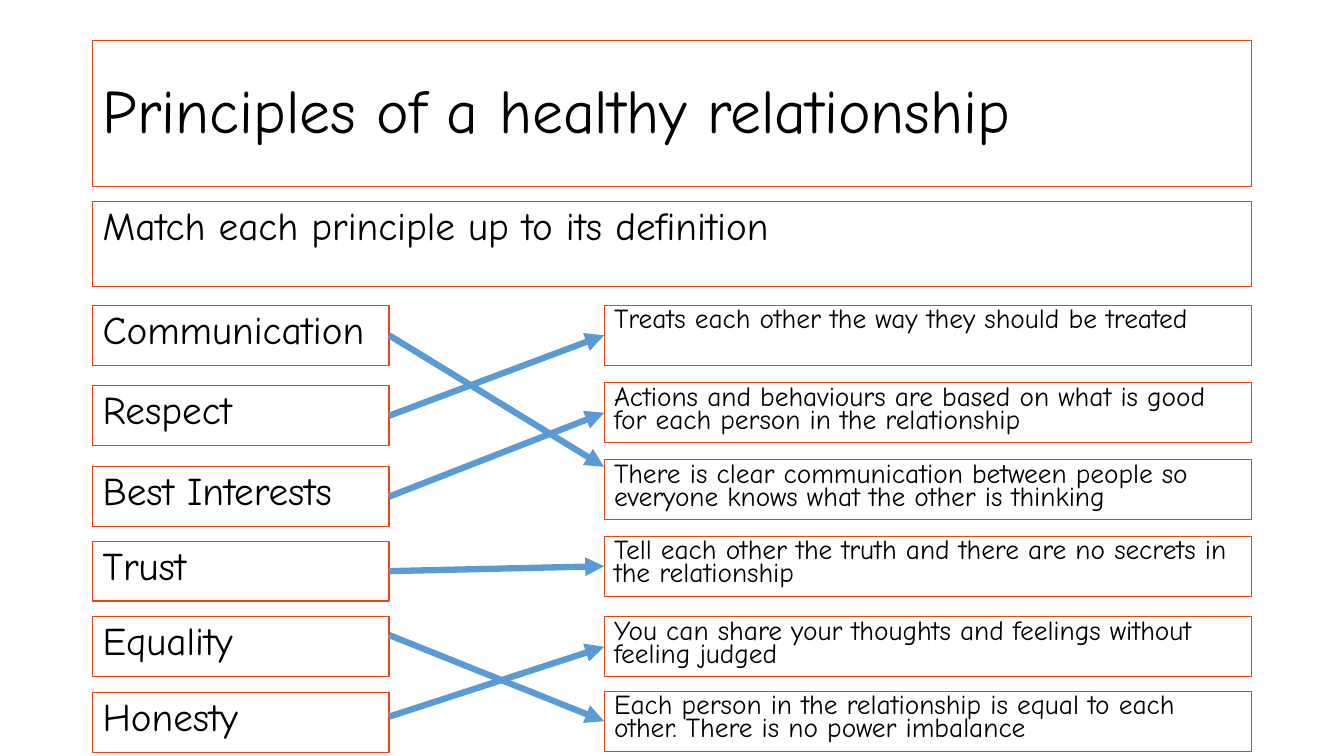
import pptx
import pptx.util
import pptx.dml.color
import pptx.enum.shapes
import pptx.enum.text
import pptx.oxml.ns
import lxml.etree

COLORS = {"border": "E74519", "text": "000000", "arrow": "5B9BD5"}
FONT = "Comic Neue"

prs = pptx.Presentation()
prs.slide_width = pptx.util.Inches(13.33)
prs.slide_height = pptx.util.Inches(7.5)
COL = prs.slide_width / 100
ROW = prs.slide_height / 100
LEFT, FULL_W = 6.9, 86.25
PRINCIPLE_W = 22.05
DEFINITION_X, DEFINITION_W = 44.95, 48.2
BOX_H = 7.9

s = prs.slides.add_slide(prs.slide_layouts[5])


def format_box(sp, box, text, size, spacing, before=10):
    x, y, w, h = box
    sp.left, sp.top = round(x * COL), round(y * ROW)
    sp.width, sp.height = round(w * COL), round(h * ROW)
    sp.line.color.rgb = pptx.dml.color.RGBColor.from_string(COLORS["border"])
    sp.line.width = pptx.util.Pt(0.75)
    tf = sp.text_frame
    tf.text = text
    tf.word_wrap = True
    tf.auto_size = pptx.enum.text.MSO_AUTO_SIZE.NONE
    tf.vertical_anchor = pptx.enum.text.MSO_ANCHOR.TOP
    p = tf.paragraphs[0]
    p.alignment = pptx.enum.text.PP_ALIGN.LEFT
    p.line_spacing = spacing
    p.space_before = pptx.util.Pt(before)
    p.font.name = FONT
    p.font.size = pptx.util.Pt(size)
    p.font.color.rgb = pptx.dml.color.RGBColor.from_string(COLORS["text"])
    return sp


title = format_box(s.shapes.title, (LEFT, 5.35, FULL_W, 19.35),
                   "Principles of a healthy relationship", 44, 0.9, 0)
title.text_frame.vertical_anchor = pptx.enum.text.MSO_ANCHOR.MIDDLE

format_box(s.shapes.add_textbox(0, 0, 0, 0), (LEFT, 26.65, FULL_W, 11.2),
           "Match each principle up to its definition", 28, 0.9)

principles = [
    (40.4, "Communication"),
    (51.05, "Respect"),
    (61.75, "Best Interests"),
    (71.6, "Trust"),
    (81.6, "Equality"),
    (91.6, "Honesty"),
]
definitions = [
    (40.4, "Treats each other the way they should be treated"),
    (50.65, "Actions and behaviours are based on what is good for each person in the relationship"),
    (60.8, "There is clear communication between people so everyone knows what the other is thinking"),
    (70.95, "Tell each other the truth and there are no secrets in the relationship"),
    (81.6, "You can share your thoughts and feelings without feeling judged"),
    (91.45, "Each person in the relationship is equal to each other. There is no power imbalance"),
]
principle_boxes = [
    format_box(s.shapes.add_textbox(0, 0, 0, 0), (LEFT, y, PRINCIPLE_W, BOX_H), text, 28, 0.9)
    for y, text in principles
]
definition_boxes = [
    format_box(s.shapes.add_textbox(0, 0, 0, 0), (DEFINITION_X, y, DEFINITION_W, BOX_H), text, 19.6, 0.7)
    for y, text in definitions
]

MIDDLE = None
matches = [
    (0, 2, MIDDLE, 61.75),
    (1, 0, MIDDLE, MIDDLE),
    (2, 1, MIDDLE, MIDDLE),
    (3, 3, MIDDLE, MIDDLE),
    (4, 5, 84, MIDDLE),
    (5, 4, 94.8, MIDDLE),
]
for principle, definition, start_y, end_y in matches:
    arrow = s.shapes.add_connector(
        pptx.enum.shapes.MSO_CONNECTOR.STRAIGHT,
        round((LEFT + PRINCIPLE_W) * COL), round((start_y or 0) * ROW),
        round(DEFINITION_X * COL), round((end_y or 0) * ROW))
    if start_y is MIDDLE:
        arrow.begin_connect(principle_boxes[principle], 3)
    if end_y is MIDDLE:
        arrow.end_connect(definition_boxes[definition], 1)
    arrow.line.color.rgb = pptx.dml.color.RGBColor.from_string(COLORS["arrow"])
    arrow.line.width = pptx.util.Pt(4.5)
    ln = arrow.line._get_or_add_ln()
    lxml.etree.SubElement(ln, pptx.oxml.ns.qn("a:tailEnd"), type="triangle")
    lxml.etree.SubElement(arrow._element.spPr, pptx.oxml.ns.qn("a:effectLst"))

prs.save("out.pptx")
